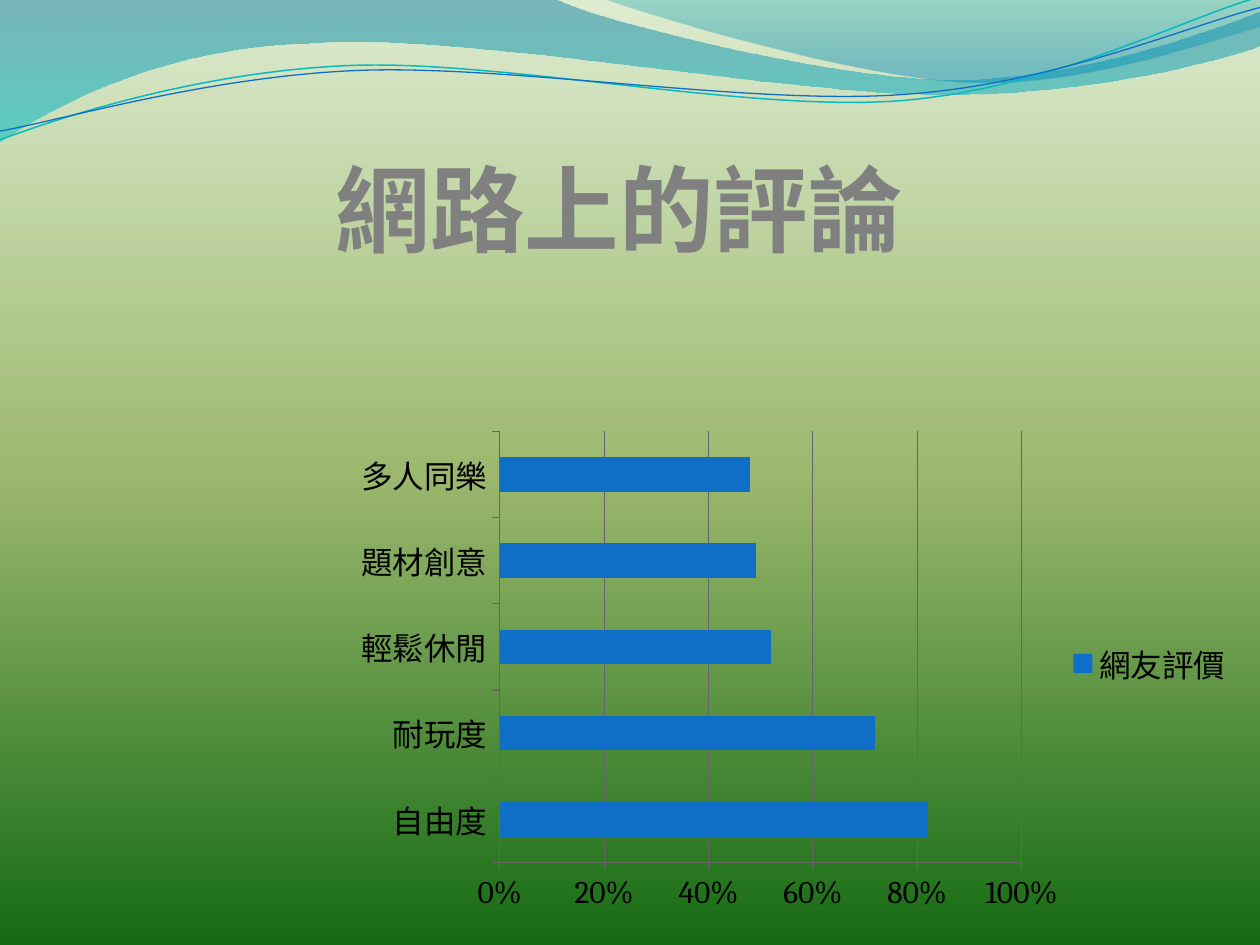
from dataclasses import dataclass
from math import cos, radians, sin
from lxml.etree import SubElement
from pptx import Presentation
from pptx.chart.data import CategoryChartData
from pptx.dml.color import RGBColor
from pptx.enum.chart import XL_CHART_TYPE, XL_LEGEND_POSITION, XL_TICK_MARK
from pptx.enum.text import MSO_AUTO_SIZE, PP_ALIGN
from pptx.oxml.ns import qn
from pptx.util import Inches, Pt


@dataclass(frozen=True)
class Theme:
    font: str = "Cambria"
    title_size: int = 54
    chart_size: int = 18
    title: str = "808080"
    text: str = "000000"
    bar: str = "0F6FC6"
    grid: str = "666666"
    teal: str = "0AB8BF"
    backdrop: tuple = ((0, "DDEBCF", 100), (50, "9CB86E", 100), (100, "156B13", 100))
    wave: tuple = ((0, "0074A1", 45), (100, "00C6CF", 55))
    crest: tuple = ((0, "00A1A9", 30), (80, "008BBF", 45))


THEME = Theme()
COLUMNS, ROWS = 10, 7.5
CELL = Inches(1)
TILT = -2.7

WAVE = [
    (0, 0), (4.4, -0.01), (4.76, 0.17, 6.64, 0.63, 7.58, 0.63),
    (8.53, 0.63, 9.58, 0.26, 10, 0.09), (10.01, 0.36),
    (9.83, 0.44, 8.7, 0.76, 7.46, 0.75), (6.22, 0.75, 3.82, 0.28, 2.57, 0.34),
    (1.29, 0.36, 0.46, 0.83, -0.01, 1.13), (0, 0),
]
CREST = [
    (4.79, -0.01), (5.09, 0.11, 6.82, 0.62, 7.69, 0.65),
    (8.56, 0.69, 9.61, 0.32, 10, 0.21), (10, 0), (4.79, -0.01),
]
TEAL_LINE = [
    (0, 1.11), (0.48, 0.93, 1.58, 0.57, 2.77, 0.52),
    (3.95, 0.47, 5.93, 0.89, 7.13, 0.8), (8.33, 0.71, 9.38, 0.15, 9.98, -0.02),
]
BLUE_LINE = [
    (0, 1.04), (0.47, 0.96, 1.64, 0.61, 2.83, 0.56),
    (4.03, 0.51, 5.97, 0.84, 7.17, 0.75), (8.36, 0.67, 9.41, 0.21, 10, 0.06),
]
RATINGS = {"自由度": 0.82, "耐玩度": 0.72, "輕鬆休閒": 0.52, "題材創意": 0.49, "多人同樂": 0.48}
PLOT_LAYOUT = {
    "layoutTarget": "inner", "xMode": "edge", "yMode": "edge",
    "x": 0.192, "y": 0.054, "w": 0.565, "h": 0.829,
}


def cells(*values):
    return [round(value * CELL) for value in values]


def set_all(target, values):
    for name, value in values.items():
        setattr(target, name, value)


def style_font(font, size, color, bold=False):
    set_all(font, {"name": THEME.font, "size": Pt(size), "bold": bold})
    font.color.rgb = RGBColor.from_string(color)


def style_line(line, color, width):
    line.color.rgb = RGBColor.from_string(color)
    line.width = Pt(width)


def paint_gradient(fill, element, stops):
    fill.gradient()
    fill.gradient_angle = 270
    stop_list = next(element.iter(qn("a:gsLst")))
    for old_stop in list(stop_list):
        stop_list.remove(old_stop)
    for position, color, opacity in stops:
        stop = SubElement(stop_list, qn("a:gs"), pos=str(position * 1000))
        paint = SubElement(stop, qn("a:srgbClr"), val=color)
        if opacity < 100:
            SubElement(paint, qn("a:alpha"), val=str(opacity * 1000))


def split_pairs(part):
    return list(zip(part[::2], part[1::2]))


def turn(part, center, degrees):
    angle = radians(degrees)
    turned = []
    for x, y in split_pairs(part):
        across, down = x - center[0], y - center[1]
        turned.append(center[0] + across * cos(angle) - down * sin(angle))
        turned.append(center[1] + across * sin(angle) + down * cos(angle))
    return turned


def bend_segments(shape, outline):
    segments = iter(list(shape.element.iter(qn("a:lnTo"))))
    for part in outline[1:]:
        first, *others = [next(segments) for _ in split_pairs(part)]
        if others:
            first.tag = qn("a:cubicBezTo")
            for segment in others:
                first.append(segment[0])
                segment.getparent().remove(segment)


def add_outline(page, outline, close):
    start, *rest = [cells(*pair) for part in outline for pair in split_pairs(part)]
    builder = page.shapes.build_freeform(*start)
    builder.add_line_segments(rest, close=close)
    shape = builder.convert_to_shape()
    bend_segments(shape, outline)
    shape.shadow.inherit = False
    return shape


def add_ribbon(page, outline, stops):
    shape = add_outline(page, outline, True)
    shape.line.fill.background()
    paint_gradient(shape.fill, shape.element, stops)


def add_strand(page, outline, center, color, width):
    level = [turn(part, center, -TILT) for part in outline]
    shape = add_outline(page, level, False)
    shape.rotation = TILT
    shape.fill.background()
    style_line(shape.line, color, width)


def add_title(page, text):
    box = page.shapes.add_textbox(*cells(2.54, 1.15, 4.75, 1.01))
    set_all(box.text_frame, {"word_wrap": False, "auto_size": MSO_AUTO_SIZE.SHAPE_TO_FIT_TEXT})
    para = box.text_frame.paragraphs[0]
    para.alignment = PP_ALIGN.CENTER
    span = para.add_run()
    span.text = text
    style_font(span.font, THEME.title_size, THEME.title, True)


def place_plot(chart):
    plot_area = next(chart.element.iter(qn("c:plotArea")))
    layout = plot_area.find(qn("c:layout"))
    if layout is None:
        layout = plot_area.makeelement(qn("c:layout"))
        plot_area.insert(0, layout)
    manual = SubElement(layout, qn("c:manualLayout"))
    for name, value in PLOT_LAYOUT.items():
        SubElement(manual, qn(f"c:{name}"), val=str(value))


def add_rating_chart(page):
    data = CategoryChartData(number_format="0%")
    data.categories = list(RATINGS)
    data.add_series("網友評價", list(RATINGS.values()))
    frame = page.shapes.add_chart(
        XL_CHART_TYPE.BAR_CLUSTERED, *cells(2.56, 3.2, 7.33, 4.13), data)
    chart = frame.chart
    set_all(chart, {"has_title": False, "has_legend": True})
    style_font(chart.font, THEME.chart_size, THEME.text)
    set_all(chart.legend, {"position": XL_LEGEND_POSITION.RIGHT, "include_in_layout": False})
    plot = chart.plots[0]
    set_all(plot, {"gap_width": 150, "vary_by_categories": False})
    bars = plot.series[0].format.fill
    bars.solid()
    bars.fore_color.rgb = RGBColor.from_string(THEME.bar)
    for axis in (chart.category_axis, chart.value_axis):
        axis.major_tick_mark = XL_TICK_MARK.OUTSIDE
        style_line(axis.format.line, THEME.grid, 0.75)
    values = chart.value_axis
    set_all(values, {"minimum_scale": 0, "maximum_scale": 1, "major_unit": 0.2,
                     "has_major_gridlines": True})
    set_all(values.tick_labels, {"number_format": "0%", "number_format_is_linked": False})
    style_line(values.major_gridlines.format.line, THEME.grid, 0.75)
    place_plot(chart)


def main():
    deck = Presentation()
    deck.slide_width, deck.slide_height = cells(COLUMNS, ROWS)
    page = deck.slides.add_slide(deck.slide_layouts[6])
    paint_gradient(page.background.fill, page.element, THEME.backdrop)
    add_ribbon(page, WAVE, THEME.wave)
    add_ribbon(page, CREST, THEME.crest)
    add_strand(page, TEAL_LINE, (4.99, 0.58), THEME.teal, 0.85)
    add_strand(page, BLUE_LINE, (5, 0.59), THEME.bar, 0.75)
    add_rating_chart(page)
    add_title(page, "網路上的評論")
    deck.save("out.pptx")


if __name__ == "__main__":
    main()
